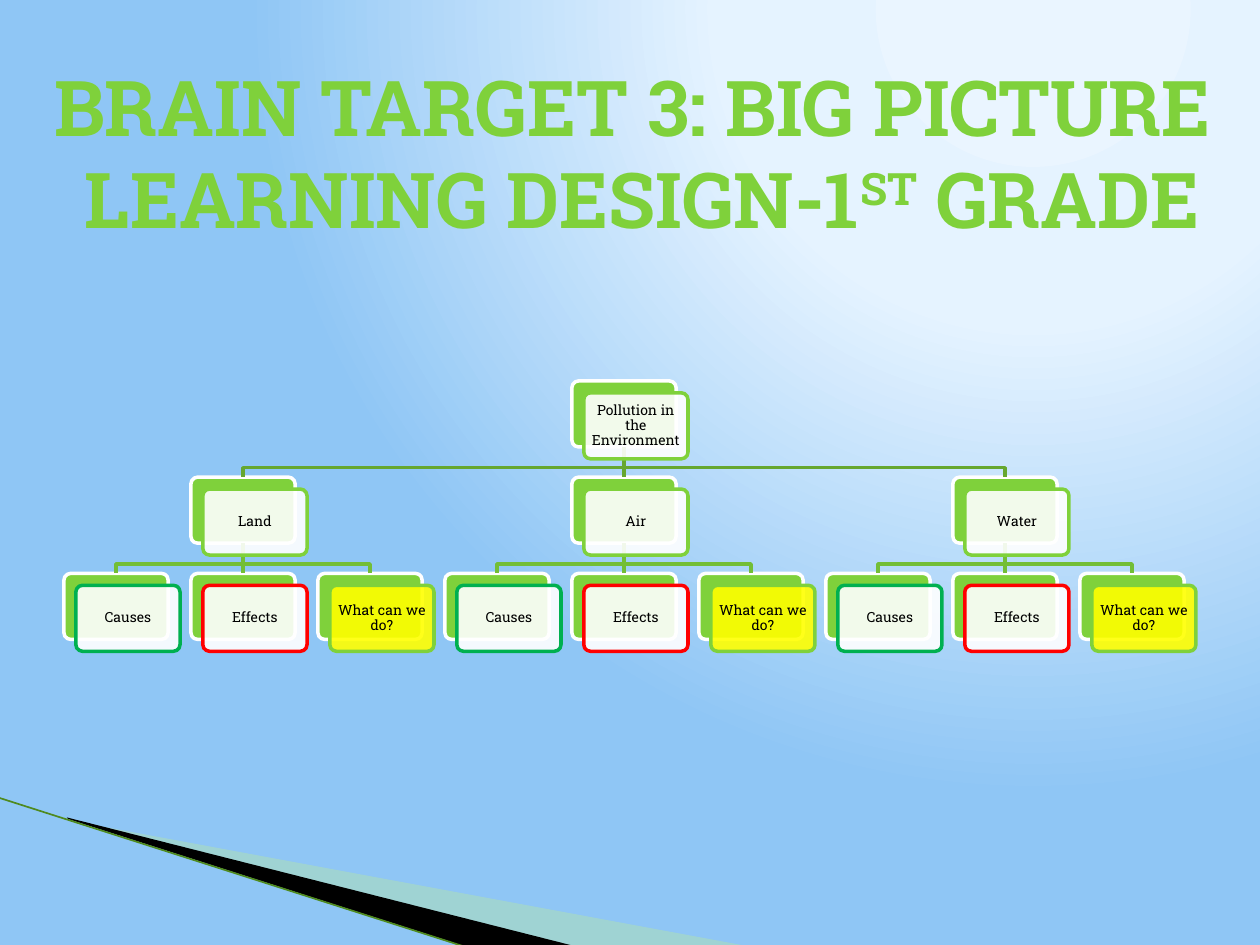
from dataclasses import dataclass

from lxml import etree
from pptx import Presentation
from pptx.dml.color import RGBColor
from pptx.enum import shapes, text
from pptx.oxml import parse_xml
from pptx.oxml.ns import nsdecls, qn
from pptx.util import Cm, Pt


@dataclass(frozen=True)
class Theme:
    font: str = "Roboto Slab"
    title: int = 44
    label: int = 8
    stroke: float = 2
    lime: str = "7FD13B"
    white: str = "FFFFFF"
    black: str = "000000"
    green: str = "00B050"
    red: str = "FF0000"
    yellow: str = "FFFF00"
    trunk: str = "66A72F"
    twig: str = "73BE36"
    mint: str = "B8E7A1"
    edge: str = "4F8A1F"
    glow: tuple = ((0, "EAF5FF"), (40, "E5F3FF"), (100, "8FC6F5"))


def write(frame, content, size, color, bold=False, font=None, space=None):
    """Fill a frame; each line is a list of (text, baseline percent) runs."""
    for i, line in enumerate(content):
        para = frame.paragraphs[0] if i == 0 else frame.add_paragraph()
        para.alignment = text.PP_ALIGN.CENTER
        if space:
            para.line_spacing = space
        for words, base in line:
            run = para.add_run()
            run.text = words
            run.font.name, run.font.size, run.font.bold = font, Pt(size), bold
            run.font.color.rgb = RGBColor.from_string(color)
            if base:
                run.font._element.set("baseline", str(base * 1000))


class Deck:
    def __init__(self, theme):
        self.theme = theme
        self.file = Presentation()
        self.file.slide_width, self.file.slide_height = Cm(25.4), Cm(19.05)
        self.slide = self.file.slides.add_slide(self.file.slide_layouts[6])
        self.items = self.slide.shapes

    def glow(self):
        """Paint the background with a round gradient from the top right."""
        fill = self.slide.background.fill
        fill.solid()
        fill.fore_color.rgb = RGBColor.from_string(self.theme.white)
        stops = "".join(
            f'<a:gs pos="{pos * 1000}"><a:srgbClr val="{color}"/></a:gs>'
            for pos, color in self.theme.glow)
        grad = parse_xml(
            f'<a:gradFill {nsdecls("a")} rotWithShape="1"><a:gsLst>{stops}</a:gsLst>'
            '<a:path path="circle"><a:fillToRect l="65000" t="0" r="0" b="98000"/>'
            '</a:path></a:gradFill>')
        solid = self.slide._element.find(".//" + qn("p:bgPr")).find(qn("a:solidFill"))
        solid.getparent().replace(solid, grad)

    def paint(self, shape, fill=None, line=None, alpha=100):
        shape.shadow.inherit = False
        if fill:
            shape.fill.solid()
            shape.fill.fore_color.rgb = RGBColor.from_string(fill)
            if alpha < 100:
                tint = shape._element.spPr.find(qn("a:solidFill"))[0]
                etree.SubElement(tint, qn("a:alpha")).set("val", str(alpha * 1000))
        else:
            shape.fill.background()
        if line:
            shape.line.color.rgb = RGBColor.from_string(line)
            shape.line.width = Pt(self.theme.stroke)
        else:
            shape.line.fill.background()

    def box(self, left, top, width, height, **look):
        shape = self.items.add_shape(
            shapes.MSO_SHAPE.ROUNDED_RECTANGLE,
            Cm(left), Cm(top), Cm(width), Cm(height))
        shape.adjustments[0] = 0.1
        self.paint(shape, **look)
        return shape

    def label(self, shape, words):
        frame = shape.text_frame
        frame.word_wrap = True
        frame.vertical_anchor = text.MSO_ANCHOR.MIDDLE
        frame.margin_left = frame.margin_right = Cm(0.08)
        frame.margin_top = frame.margin_bottom = Cm(0.08)
        write(frame, [[(words, 0)]], self.theme.label, self.theme.black,
              font=self.theme.font, space=0.9)

    def shape(self, points, close=True, **look):
        """Draw a free outline through points given in EMU."""
        pen = self.items.build_freeform(*points[0])
        pen.add_line_segments(points[1:], close=close)
        self.paint(pen.convert_to_shape(), **look)

    def line(self, start, end, color, width):
        link = self.items.add_connector(
            shapes.MSO_CONNECTOR.STRAIGHT, *start, *end)
        link.line.color.rgb = RGBColor.from_string(color)
        link.line.width = Pt(width)
        etree.SubElement(link._element.spPr, qn("a:effectLst"))
        return link

    def link(self, top, low, color):
        """Join two cards, with a bent line unless one stands above the other."""
        x, y = top.left + top.width // 2, top.top + top.height
        end = low.left + low.width // 2
        if x == end:
            join = self.line((x, y), (end, low.top), color, self.theme.stroke)
            join.begin_connect(top, 2)
            join.end_connect(low, 0)
        else:
            bend = y + Cm(0.42)
            self.shape([(x, y), (x, bend), (end, bend), (end, low.top)],
                       close=False, line=color)

    def title(self, lines):
        box = self.items.add_textbox(Cm(0), Cm(1.07), Cm(25.91), Cm(4.01))
        box.text_frame.word_wrap = False
        box.text_frame.auto_size = text.MSO_AUTO_SIZE.SHAPE_TO_FIT_TEXT
        write(box.text_frame, lines, self.theme.title, self.theme.lime,
              bold=True, font=self.theme.font)


def points(*pairs):
    return [(Cm(x), Cm(y)) for x, y in pairs]


def corner(deck):
    look = deck.theme
    deck.shape(points((1.4, 16.54), (15.11, 19.08), (11.58, 19.08), (1.4, 16.51)),
               fill=look.mint, alpha=40)
    deck.shape(points((1.35, 16.48), (11.61, 19.08), (9.45, 19.1), (1.37, 16.51)),
               fill=look.black)
    deck.line(*points((-0.03, 16.08), (9.42, 19.1)), look.edge, 0.95)


def tree(deck):
    look = deck.theme
    left, top, across, down = 1.29, 7.68, 2.56, 1.94
    width, height, shift = 2.1, 1.33, 0.24
    leaves = [("Causes", look.white, look.green),
              ("Effects", look.white, look.red),
              ("What can we do?", look.yellow, look.lime)]
    fronts, links = [], []

    def card(col, row, words, fill=look.white, line=look.lime):
        x, y = left + col * across, top + row * down
        fronts.append((x + shift, y + shift, words, fill, line))
        return deck.box(x, y, width, height, fill=look.lime, line=look.white)

    root = card(4, 0, "Pollution in the Environment")
    for i, topic in enumerate(["Land", "Air", "Water"]):
        branch = card(3 * i + 1, 1, topic)
        links.append((root, branch, look.trunk))
        for j, leaf in enumerate(leaves):
            links.append((branch, card(3 * i + j, 2, *leaf), look.twig))

    for ends in links:
        deck.link(*ends)
    for x, y, words, fill, line in fronts:
        deck.label(deck.box(x, y, width, height, fill=fill, line=line, alpha=90), words)


def main():
    deck = Deck(Theme())
    deck.glow()
    corner(deck)
    tree(deck)
    deck.title([[("BRAIN TARGET 3: BIG PICTURE ", 0)],
                [("LEARNING DESIGN-1", 0), ("ST", 30), (" GRADE", 0)]])
    deck.file.save("out.pptx")


if __name__ == "__main__":
    main()
